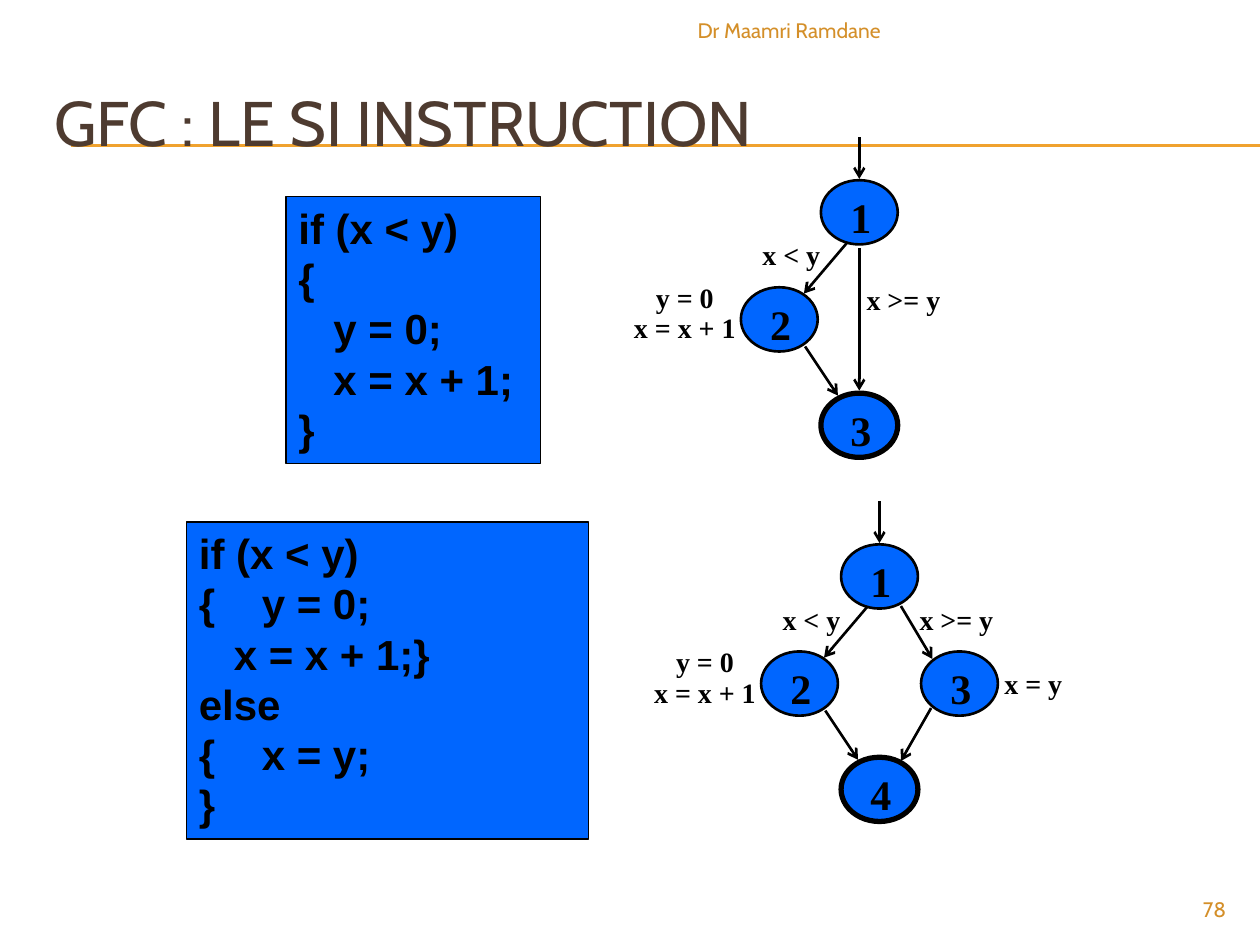
from lxml import etree
from pptx import Presentation
from pptx.dml.color import RGBColor
from pptx.enum.shapes import MSO_CONNECTOR, MSO_SHAPE
from pptx.enum.text import MSO_ANCHOR, MSO_AUTO_SIZE, PP_ALIGN
from pptx.oxml.ns import qn
from pptx.util import Inches, Pt

LEFT, CENTER, RIGHT = PP_ALIGN.LEFT, PP_ALIGN.CENTER, PP_ALIGN.RIGHT
TOP, MIDDLE = MSO_ANCHOR.TOP, MSO_ANCHOR.MIDDLE
NO_AUTOSIZE = MSO_AUTO_SIZE.NONE
OVAL, RECTANGLE = MSO_SHAPE.OVAL, MSO_SHAPE.RECTANGLE
STRAIGHT = MSO_CONNECTOR.STRAIGHT

COLORS = {"ink": "000000", "blue": "0066FF", "title": "4E3B30",
          "footer": "D48F29", "rule": "F0A22E"}
COLUMNS, ROWS = 100, 75
CELL = Inches(10) / COLUMNS
NODE_WIDTH, NODE_HEIGHT = 6.1, 5.1
SIDE, MIDDLE_ROW, END_ROW = 6.35, 8.5, 16.9

IF_CODE = ["if (x < y)", "{", "   y = 0;", "   x = x + 1;", "}"]
IF_ELSE_CODE = ["if (x < y)", "{    y = 0;", "   x = x + 1;}", "else",
                "{    x = y;", "}"]


def cells(*values):
    return [round(value * CELL) for value in values]


def color(name):
    return RGBColor.from_string(COLORS[name])


def write(shape, text, size, font="Times New Roman", ink="ink", bold=True,
          align=LEFT, anchor=TOP, wrap=True, line_spacing=None, before=None):
    frame = shape.text_frame
    frame.text = text
    frame.word_wrap = wrap
    frame.auto_size = NO_AUTOSIZE
    frame.vertical_anchor = anchor
    for paragraph in frame.paragraphs:
        paragraph.alignment = align
        paragraph.line_spacing = line_spacing
        paragraph.space_before = before
        for run in paragraph.runs:
            run.font.size = Pt(size)
            run.font.name = font
            run.font.bold = bold
            run.font.color.rgb = color(ink)


def add_text(shapes, box, text, size, **style):
    write(shapes.add_textbox(*cells(*box)), text, size, **style)


def add_filled(shapes, kind, box, line_width):
    shape = shapes.add_shape(kind, *cells(*box))
    shape.shadow.inherit = False
    shape.fill.solid()
    shape.fill.fore_color.rgb = color("blue")
    shape.line.color.rgb = color("ink")
    shape.line.width = Pt(line_width)
    return shape


def add_line(shapes, start, end, ink="ink", width=1.5, arrow=True):
    connector = shapes.add_connector(STRAIGHT, *cells(*start, *end))
    connector.line.color.rgb = color(ink)
    connector.line.width = Pt(width)
    properties = connector.element.spPr
    if arrow:
        etree.SubElement(properties.find(qn("a:ln")), qn("a:tailEnd"), type="arrow")
    etree.SubElement(properties, qn("a:effectLst"))
    return connector


def add_code(slide, box, lines):
    shape = add_filled(slide.shapes, RECTANGLE, box, 1)
    write(shape, "\n".join(lines), 24, font="Arial", line_spacing=Pt(28.7))


def add_node(shapes, center, number, line_width=1.5):
    x, y = center
    left, top = x - NODE_WIDTH / 2, y - NODE_HEIGHT / 2
    add_filled(shapes, OVAL, (left, top, NODE_WIDTH, NODE_HEIGHT), line_width)
    add_text(shapes, (x - 1.7, top + 0.4, 3.4, 4.3), number, 24, wrap=False)


def add_flow_graph(slide, origin, nodes, edges, labels):
    shapes = slide.shapes.add_group_shape().shapes

    def place(x, y):
        return origin[0] + x, origin[1] + y

    for number, (x, y) in enumerate(nodes, start=1):
        add_node(shapes, place(x, y), str(number), 3 if number == len(nodes) else 1.5)
    for start, end in edges:
        add_line(shapes, place(*start), place(*end))
    for text, x, y in labels:
        add_text(shapes, (*place(x, y), 8.2, 3.7), text, 16,
                 align=CENTER, before=Pt(8))
    add_text(shapes, (*place(-19, 6.05), 10.3, 5), "y = 0\nx = x + 1", 16,
             align=CENTER, line_spacing=0.5, before=Pt(8))


def add_heading(slide):
    title = slide.shapes.title
    title.left, title.top, title.width, title.height = cells(3.3, 5, 95, 9.2)
    write(title, "GFC : LE SI INSTRUCTION", 36, font="Cabin", ink="title",
          bold=False, anchor=MIDDLE)
    for row in (11.5, 11.6):
        rule = add_line(slide.shapes, (5.6, row), (COLUMNS, row), "rule", 0.75, False)
        title.element.addprevious(rule.element)
    for box, text in [((39.2, 0.8, 31.7, 3.2), "Dr Maamri Ramdane"),
                      ((90, 70.8, 8.3, 2.7), "78")]:
        add_text(slide.shapes, box, text, 12, font="Cabin", ink="footer",
                 bold=False, align=RIGHT, anchor=MIDDLE)


def main():
    presentation = Presentation()
    presentation.slide_width, presentation.slide_height = cells(COLUMNS, ROWS)
    slide = presentation.slides.add_slide(presentation.slide_layouts[5])
    add_heading(slide)

    first, left = (0, 0), (-SIDE, MIDDLE_ROW)
    right, last = (SIDE, MIDDLE_ROW), (0, END_ROW)
    shared_edges = [((0, -5.95), (0, -2.65)),
                    ((-1, 2.45), (-4.4, 6.45)),
                    ((-4.3, 10.65), (-1.7, 14.55))]
    shared_labels = [("x < y", -9.5, 1.55)]

    add_code(slide, (14.8, 41.4, 31.9, 25.2), IF_ELSE_CODE)
    add_flow_graph(slide, (69.8, 45.75), [first, left, right, last],
                   shared_edges + [((1.7, 2.35), (4.2, 6.55)),
                                   ((4.1, 10.45), (1.7, 14.65))],
                   shared_labels + [("x >= y", 2, 1.55), ("x = y", 8.1, 6.65)])

    add_code(slide, (22.7, 15.6, 20.2, 21.2), IF_CODE)
    add_flow_graph(slide, (68.2, 16.85), [first, left, last],
                   shared_edges + [((0, 2.85), (0, 14.15))],
                   shared_labels + [("x >= y", -0.6, 5.05)])
    presentation.save("out.pptx")


if __name__ == "__main__":
    main()
